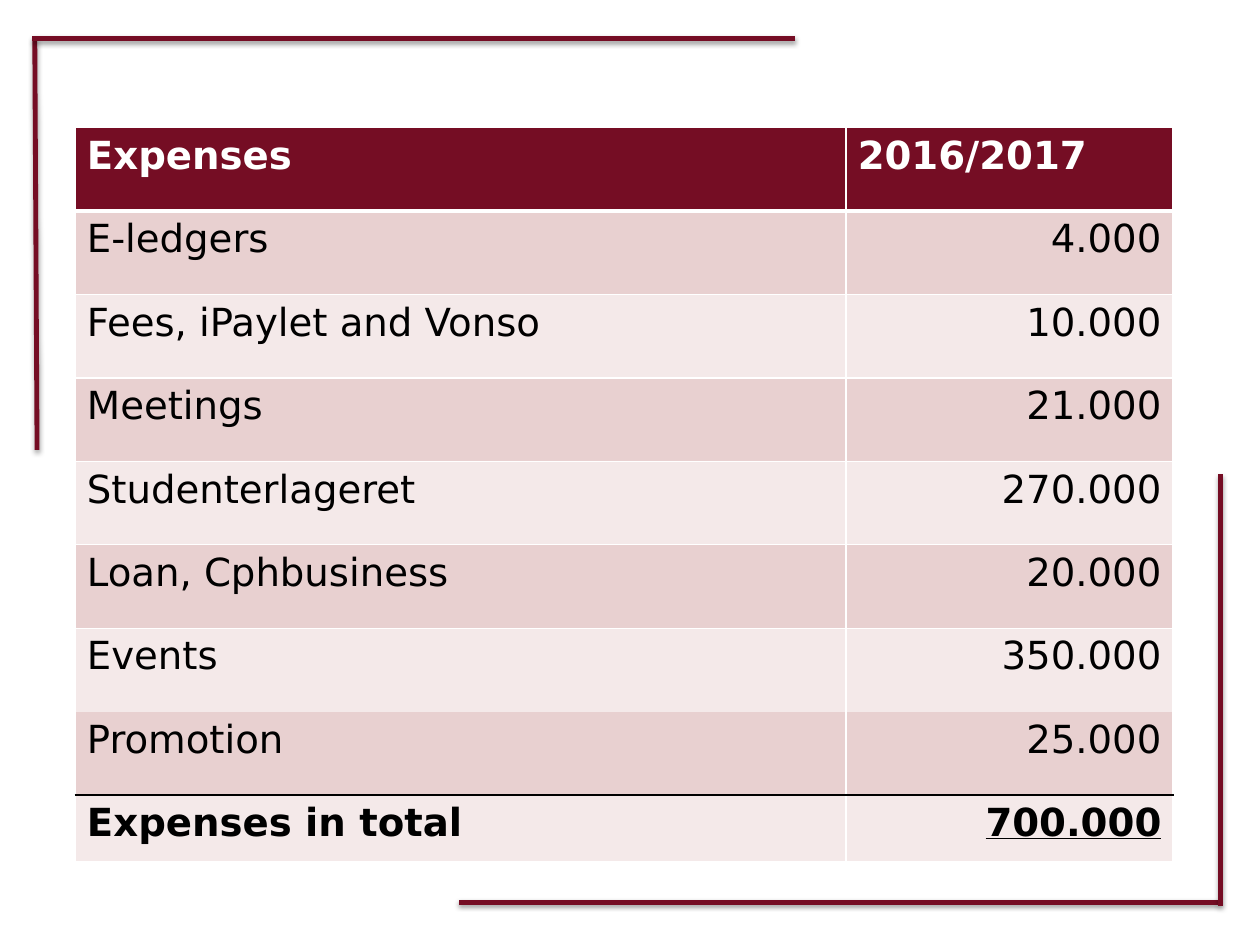
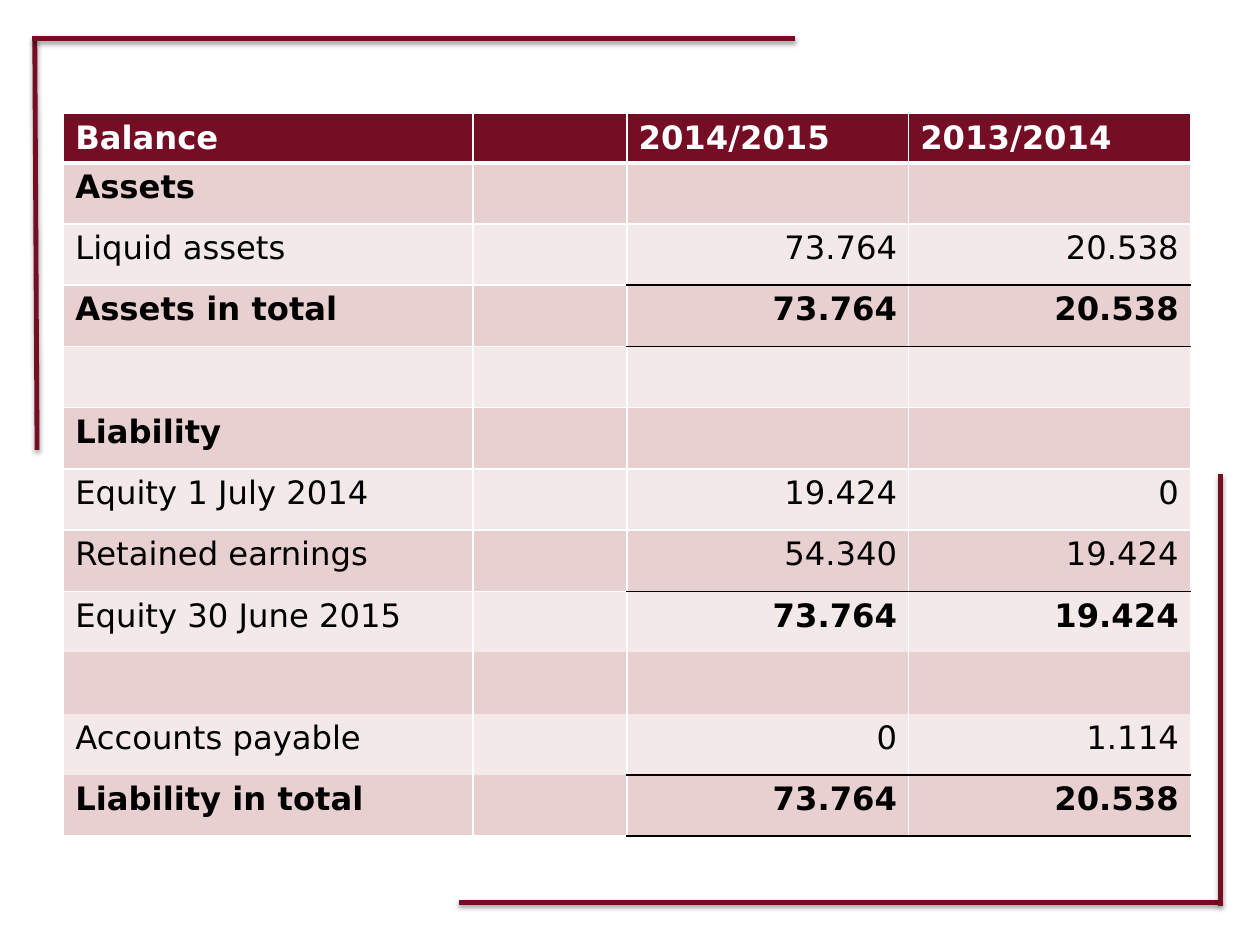
import dataclasses

import pptx
import pptx.dml.color
import pptx.enum.shapes
import pptx.enum.text
import pptx.oxml
import pptx.oxml.ns
import pptx.util

Inches = pptx.util.Inches
Pt = pptx.util.Pt


@dataclasses.dataclass(frozen=True)
class Theme:
    """Colours, font and sizes shared by the slides."""

    accent: str = "750D24"
    band_dark: str = "E8D0D0"
    band_light: str = "F4E9E9"
    ink: str = "000000"
    paper: str = "FFFFFF"
    font: str = "DejaVu Sans"
    expenses_size: int = 24
    balance_size: int = 20
    frame_line: int = 3
    grid_line: int = 1


@dataclasses.dataclass(frozen=True)
class Row:
    """One table row; total_below draws a dark rule under the ruled columns."""

    texts: tuple
    bold_label: bool = False
    bold_values: bool = False
    underline: bool = False
    line_below: bool = True
    total_below: bool = False


THEME = Theme()
NAMESPACE = pptx.oxml.ns.nsdecls("a")
FRAME_LINES = (
    ((0.3, 0.33), (0.32, 3.88)),
    ((0.28, 0.33), (6.86, 0.33)),
    ((10.51, 7.78), (3.96, 7.78)),
    ((10.53, 7.81), (10.53, 4.09)),
)

EXPENSES = (
    Row(("Expenses", "2016/2017"), bold_label=True, bold_values=True),
    Row(("E-ledgers", "4.000")),
    Row(("Fees, iPaylet and Vonso", "10.000")),
    Row(("Meetings", "21.000")),
    Row(("Studenterlageret", "270.000")),
    Row(("Loan, Cphbusiness", "20.000")),
    Row(("Events", "350.000"), line_below=False),
    Row(("Promotion", "25.000"), total_below=True),
    Row(("Expenses in total", "700.000"), bold_label=True, bold_values=True, underline=True),
)

BALANCE = (
    Row(("Balance", "", "2014/2015", "2013/2014"), bold_label=True, bold_values=True),
    Row(("Assets", "", "", ""), bold_label=True),
    Row(("Liquid assets", "", "73.764", "20.538"), total_below=True),
    Row(("Assets in total", "", "73.764", "20.538"),
        bold_label=True, bold_values=True, total_below=True),
    Row(("", "", "", "")),
    Row(("Liability", "", "", ""), bold_label=True),
    Row(("Equity 1 July 2014", "", "19.424", "0")),
    Row(("Retained earnings", "", "54.340", "19.424"), total_below=True),
    Row(("Equity 30 June 2015", "", "73.764", "19.424"), bold_values=True, line_below=False),
    Row(("", "", "", ""), line_below=False),
    Row(("Accounts payable", "", "0", "1.114"), line_below=False, total_below=True),
    Row(("Liability in total", "", "73.764", "20.538"),
        bold_label=True, bold_values=True, total_below=True),
)


def rgb(code):
    """Turn a hex code into a colour."""
    return pptx.dml.color.RGBColor.from_string(code)


def add_corner_frame(slide):
    """Draw the two shadowed corner brackets."""
    for start, end in FRAME_LINES:
        edge = slide.shapes.add_connector(
            pptx.enum.shapes.MSO_CONNECTOR.STRAIGHT, *map(Inches, start + end))
        edge.line.color.rgb = rgb(THEME.accent)
        edge.line.width = Pt(THEME.frame_line)
        edge._element.spPr.append(pptx.oxml.parse_xml(
            f'<a:effectLst {NAMESPACE}><a:outerShdw blurRad="{Pt(3.1)}" dist="{Pt(1.6)}" '
            f'dir="5400000" rotWithShape="0"><a:srgbClr val="{THEME.ink}">'
            '<a:alpha val="38000"/></a:srgbClr></a:outerShdw></a:effectLst>'))


def rule_below(rows, index, column, ruled_from):
    """Give the colour and width of the rule under a row; no colour means no rule."""
    if index <= 0:
        return THEME.paper, THEME.frame_line if index == 0 else THEME.grid_line
    if rows[index].total_below and column >= ruled_from:
        return THEME.ink, THEME.grid_line
    return THEME.paper if rows[index].line_below else None, THEME.grid_line


def set_borders(cell, above, below):
    """Write the four borders of a cell."""
    side = (THEME.paper, THEME.grid_line)
    properties = cell._tc.get_or_add_tcPr()
    for tag, (colour, width) in zip(("lnL", "lnR", "lnT", "lnB"), (side, side, above, below)):
        paint = (f'<a:solidFill><a:srgbClr val="{colour}"/></a:solidFill>'
                 if colour else "<a:noFill/>")
        properties.append(pptx.oxml.parse_xml(
            f'<a:{tag} {NAMESPACE} w="{Pt(width)}">{paint}</a:{tag}>'))


def write_cell(cell, row, column, is_header, size):
    """Write the text of one cell in the style of its row."""
    text = row.texts[column]
    if not text:
        return
    is_value = column > 0
    paragraph = cell.text_frame.paragraphs[0]
    if is_value and not is_header:
        paragraph.alignment = pptx.enum.text.PP_ALIGN.RIGHT
    run = paragraph.add_run()
    run.text = text
    run.font.name = THEME.font
    run.font.size = Pt(size)
    run.font.bold = row.bold_values if is_value else row.bold_label
    run.font.underline = row.underline and is_value
    run.font.color.rgb = rgb(THEME.paper if is_header else THEME.ink)


def add_accounts(slide, box, widths, rows, size, fixed_heights, ruled_from):
    """Place an accounts table in a box; rows without a fixed height share the rest."""
    table = slide.shapes.add_table(len(rows), len(widths), *map(Inches, box)).table
    table.first_row = False
    table.horz_banding = False
    shared_height = (box[3] - sum(fixed_heights.values())) / (len(rows) - len(fixed_heights))
    for column, width in enumerate(widths):
        table.columns[column].width = Inches(width)
    for index, row in enumerate(rows):
        table.rows[index].height = Inches(fixed_heights.get(index, shared_height))
        band = THEME.band_dark if index % 2 else THEME.band_light
        for column in range(len(widths)):
            cell = table.cell(index, column)
            set_borders(cell, rule_below(rows, index - 1, column, ruled_from),
                        rule_below(rows, index, column, ruled_from))
            cell.fill.solid()
            cell.fill.fore_color.rgb = rgb(band if index else THEME.accent)
            write_cell(cell, row, column, index == 0, size)


def add_framed_slide(deck):
    """Add a blank slide with the corner frame."""
    slide = deck.slides.add_slide(deck.slide_layouts[6])
    add_corner_frame(slide)
    return slide


def main():
    """Build the expenses and balance slides."""
    deck = pptx.Presentation()
    deck.slide_width = Inches(10.87)
    deck.slide_height = Inches(8.15)
    add_accounts(add_framed_slide(deck), (0.65, 1.1, 9.47, 6.33), (6.65, 2.82),
                 EXPENSES, THEME.expenses_size, {len(EXPENSES) - 1: 0.57}, ruled_from=0)
    add_accounts(add_framed_slide(deck), (0.55, 0.98, 9.71, 6.22), (3.53, 1.33, 2.43, 2.43),
                 BALANCE, THEME.balance_size, {0: 0.41}, ruled_from=2)
    deck.save("out.pptx")


if __name__ == "__main__":
    main()
